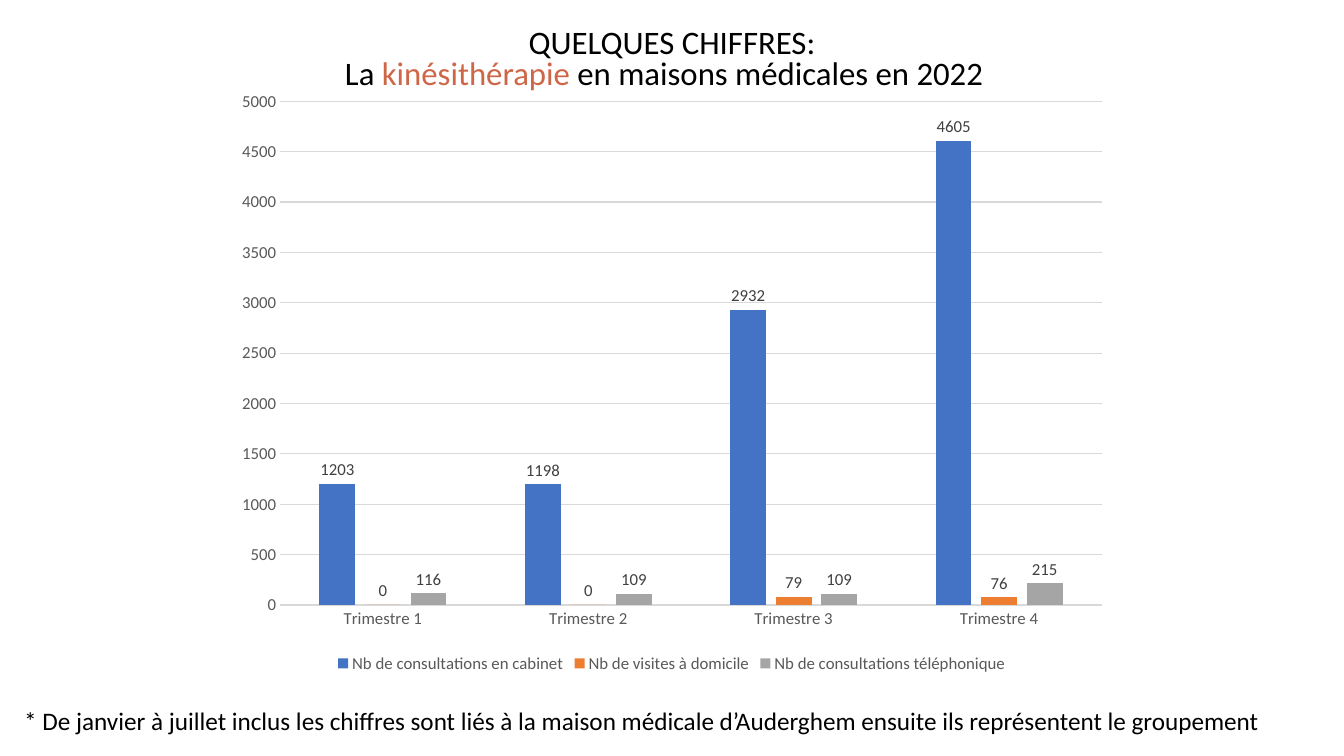
from dataclasses import dataclass

from lxml.etree import SubElement
from pptx import Presentation
from pptx.chart.chart import Chart
from pptx.chart.data import CategoryChartData
from pptx.dml.color import RGBColor
from pptx.enum.chart import (XL_CHART_TYPE, XL_LABEL_POSITION,
                             XL_LEGEND_POSITION, XL_TICK_MARK)
from pptx.enum.text import MSO_ANCHOR, MSO_AUTO_SIZE, PP_ALIGN
from pptx.oxml.ns import qn
from pptx.text.text import Font
from pptx.util import Cm, Pt

FONT_NAME = "Calibri"
BLACK = RGBColor(0x00, 0x00, 0x00)
TERRACOTTA = RGBColor(0xCD, 0x67, 0x47)
BLUE = RGBColor(0x44, 0x72, 0xC4)
ORANGE = RGBColor(0xED, 0x7D, 0x31)
GREY = RGBColor(0xA5, 0xA5, 0xA5)
AXIS_TEXT = RGBColor(0x59, 0x59, 0x59)
LABEL_TEXT = RGBColor(0x40, 0x40, 0x40)
GRID = RGBColor(0xD9, 0xD9, 0xD9)


@dataclass
class Activity:
    name: str
    values: tuple[int, ...]
    color: RGBColor


QUARTERS = [f"Trimestre {number}" for number in range(1, 5)]
ACTIVITIES = [
    Activity("Nb de consultations en cabinet", (1203, 1198, 2932, 4605), BLUE),
    Activity("Nb de visites à domicile", (0, 0, 79, 76), ORANGE),
    Activity("Nb de consultations téléphonique", (116, 109, 109, 215), GREY),
]
# Share of the chart frame taken by the plot
PLOT_LAYOUT = {"x": 0.063, "y": 0.036, "w": 0.917, "h": 0.843}


def style_font(font: Font, size: float, color: RGBColor) -> None:
    font.name = FONT_NAME
    font.size = Pt(size)
    font.bold = False
    font.color.rgb = color


def write(paragraph, text: str, *, size: float, color: RGBColor = BLACK,
          align: PP_ALIGN = PP_ALIGN.LEFT, line_spacing: float = 1.0) -> None:
    paragraph.alignment = align
    paragraph.line_spacing = line_spacing
    paragraph.space_before = Pt(0)
    run = paragraph.add_run()
    run.text = text
    style_font(run.font, size, color)


def place_plot(chart: Chart) -> None:
    plot_area = chart.plots[0]._element.getparent()
    for layout in plot_area.findall(qn("c:layout")):
        plot_area.remove(layout)
    layout = SubElement(plot_area, qn("c:layout"))
    plot_area.insert(0, layout)
    manual = SubElement(layout, qn("c:manualLayout"))
    settings = {"layoutTarget": "inner", "xMode": "edge", "yMode": "edge",
                **PLOT_LAYOUT}
    for tag, value in settings.items():
        SubElement(manual, qn(f"c:{tag}")).set("val", str(value))


def format_axes(chart: Chart) -> None:
    for axis in (chart.category_axis, chart.value_axis):
        axis.major_tick_mark = axis.minor_tick_mark = XL_TICK_MARK.NONE
        style_font(axis.tick_labels.font, 12, AXIS_TEXT)
    chart.value_axis.minimum_scale = 0
    chart.value_axis.maximum_scale = 5000
    chart.value_axis.major_unit = 500
    chart.value_axis.format.line.fill.background()
    chart.value_axis.has_major_gridlines = True
    for line in (chart.category_axis.format.line,
                 chart.value_axis.major_gridlines.format.line):
        line.color.rgb = GRID
        line.width = Pt(0.75)


def format_bars(chart: Chart) -> None:
    plot = chart.plots[0]
    plot.gap_width = 219
    plot.overlap = -27
    plot.vary_by_categories = False
    for series, activity in zip(plot.series, ACTIVITIES):
        series.format.fill.solid()
        series.format.fill.fore_color.rgb = activity.color
        labels = series.data_labels
        labels.show_value = True
        labels.position = XL_LABEL_POSITION.OUTSIDE_END
        style_font(labels.font, 12, LABEL_TEXT)


def add_activity_chart(slide) -> None:
    data = CategoryChartData()
    data.categories = QUARTERS
    for activity in ACTIVITIES:
        data.add_series(activity.name, activity.values)
    chart = slide.shapes.add_chart(
        XL_CHART_TYPE.COLUMN_CLUSTERED,
        Cm(5.64), Cm(2.01), Cm(22.58), Cm(15.06), data).chart
    chart.has_title = False
    style_font(chart.font, 10, BLACK)
    format_axes(chart)
    format_bars(chart)
    place_plot(chart)
    chart.has_legend = True
    chart.legend.position = XL_LEGEND_POSITION.BOTTOM
    chart.legend.include_in_layout = False
    style_font(chart.legend.font, 12, AXIS_TEXT)


def add_heading(slide) -> None:
    heading = slide.shapes.title
    heading.left, heading.top = Cm(0), Cm(0.53)
    heading.width, heading.height = Cm(33.87), Cm(1.98)
    frame = heading.text_frame
    frame.word_wrap = True
    frame.auto_size = MSO_AUTO_SIZE.NONE
    frame.vertical_anchor = MSO_ANCHOR.MIDDLE
    style = {"size": 23.4, "align": PP_ALIGN.CENTER, "line_spacing": 0.8}
    write(frame.paragraphs[0], "QUELQUES CHIFFRES:", **style)
    subject = frame.add_paragraph()
    write(subject, "La ", **style)
    write(subject, "kinésithérapie", color=TERRACOTTA, **style)
    write(subject, " en maisons médicales en 2022", **style)
    # The second line sits slightly left of centre
    subject._p.get_or_add_pPr().set("marR", str(Cm(0.4)))


def add_footnote(slide) -> None:
    footnote = slide.shapes.add_textbox(Cm(0.36), Cm(17.65), Cm(32.92), Cm(1.02))
    frame = footnote.text_frame
    frame.word_wrap = True
    frame.auto_size = MSO_AUTO_SIZE.SHAPE_TO_FIT_TEXT
    write(frame.paragraphs[0],
          "* De janvier à juillet inclus les chiffres sont liés à la maison "
          "médicale d’Auderghem ensuite ils représentent le groupement", size=18)


def main() -> None:
    presentation = Presentation()
    presentation.slide_width = Cm(33.87)
    presentation.slide_height = Cm(19.05)
    slide = presentation.slides.add_slide(presentation.slide_layouts[5])
    add_heading(slide)
    add_activity_chart(slide)
    add_footnote(slide)
    presentation.save("out.pptx")


if __name__ == "__main__":
    main()
